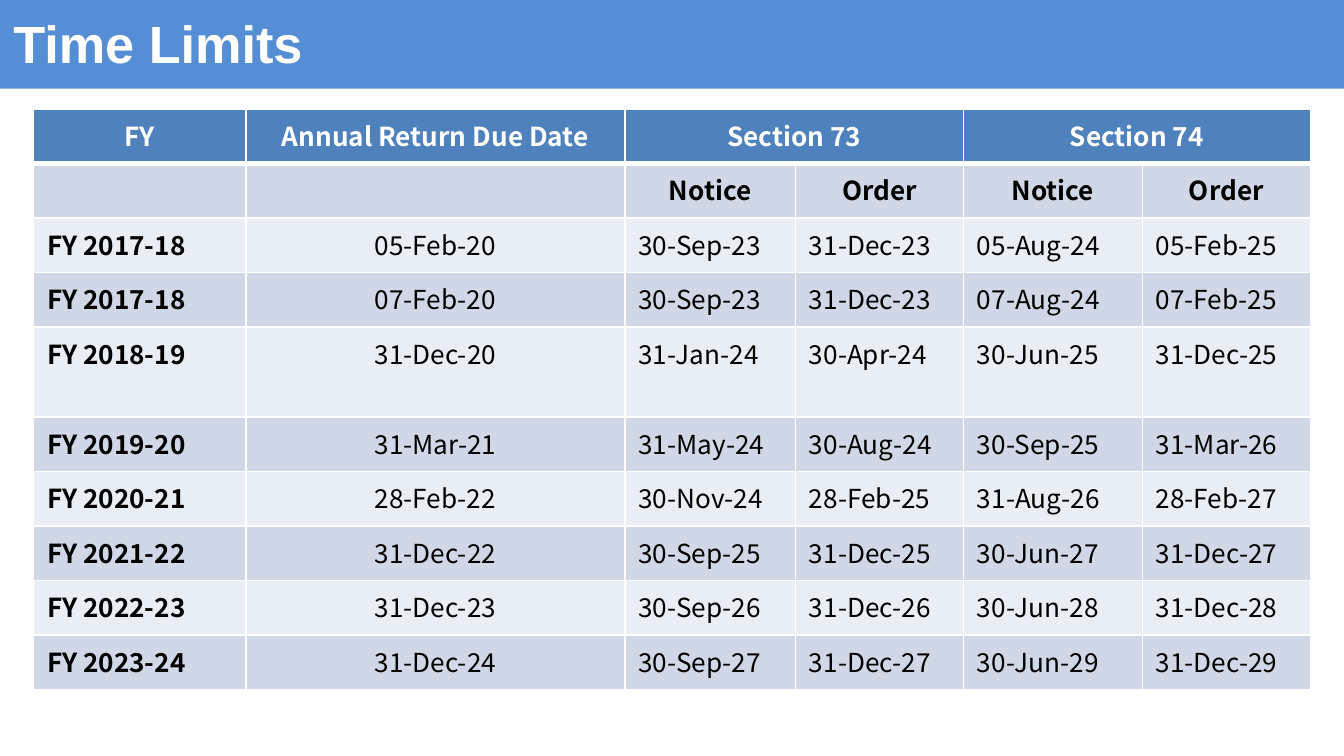
import pptx
import pptx.dml.color
import pptx.enum.text
import pptx.oxml
import pptx.oxml.ns
import pptx.util
from pptx.util import Inches

COLORS = {
    "banner": "558ED5",
    "header": "4F81BD",
    "band_dark": "D0D8E8",
    "band_light": "E9EDF4",
    "white": "FFFFFF",
    "black": "000000",
}
LEFT = pptx.enum.text.PP_ALIGN.LEFT
CENTER = pptx.enum.text.PP_ALIGN.CENTER

COLUMN_WIDTHS = [1.58, 2.82, 1.27, 1.25, 1.33, 1.25]
REGULAR_ROWS_HEIGHT = 3.65  # shared equally by all rows but the tall one
TALL_ROW, TALL_HEIGHT = 4, 0.67

TIME_LIMITS = [
    ["FY", "Annual Return Due Date", "Section 73", "", "Section 74", ""],
    ["", "", "Notice", "Order", "Notice", "Order"],
    ["FY 2017-18", "05-Feb-20", "30-Sep-23", "31-Dec-23", "05-Aug-24", "05-Feb-25"],
    ["FY 2017-18", "07-Feb-20", "30-Sep-23", "31-Dec-23", "07-Aug-24", "07-Feb-25"],
    ["FY 2018-19", "31-Dec-20", "31-Jan-24", "30-Apr-24", "30-Jun-25", "31-Dec-25"],
    ["FY 2019-20", "31-Mar-21", "31-May-24", "30-Aug-24", "30-Sep-25", "31-Mar-26"],
    ["FY 2020-21", "28-Feb-22", "30-Nov-24", "28-Feb-25", "31-Aug-26", "28-Feb-27"],
    ["FY 2021-22", "31-Dec-22", "30-Sep-25", "31-Dec-25", "30-Jun-27", "31-Dec-27"],
    ["FY 2022-23", "31-Dec-23", "30-Sep-26", "31-Dec-26", "30-Jun-28", "31-Dec-28"],
    ["FY 2023-24", "31-Dec-24", "30-Sep-27", "31-Dec-27", "30-Jun-29", "31-Dec-29"],
]


def rgb(color):
    return pptx.dml.color.RGBColor.from_string(COLORS[color])


def write_text(frame, text, font="Noto Sans CJK KR", size=14, color="black",
               bold=False, align=LEFT):
    paragraph = frame.paragraphs[0]
    paragraph.alignment = align
    run = paragraph.add_run()
    run.text = text
    run.font.name = font
    run.font.size = pptx.util.Pt(size)
    run.font.bold = bold
    run.font.color.rgb = rgb(color)


def set_borders(cell, **widths):
    """Draw white cell borders; widths in points by side: L, R, T, B."""
    properties = cell._tc.get_or_add_tcPr()
    for position, side in enumerate("LRTB"):
        width = pptx.util.Pt(widths.get(side, 1))
        properties.insert(position, pptx.oxml.parse_xml(
            f'<a:ln{side} {pptx.oxml.ns.nsdecls("a")} w="{width}"><a:solidFill>'
            f'<a:srgbClr val="{COLORS["white"]}"/></a:solidFill></a:ln{side}>'))


class SlideBuilder:
    def __init__(self, presentation):
        self.slide = presentation.slides.add_slide(presentation.slide_layouts[5])

    def banner(self, text):
        title = self.slide.shapes.title
        title.left, title.top = Inches(0), Inches(-0.02)
        title.width, title.height = Inches(10), Inches(0.68)
        title.fill.solid()
        title.fill.fore_color.rgb = rgb("banner")
        frame = title.text_frame
        frame.word_wrap = True
        frame.auto_size = pptx.enum.text.MSO_AUTO_SIZE.NONE
        frame.vertical_anchor = pptx.enum.text.MSO_ANCHOR.MIDDLE
        write_text(frame, text, font="Arial", size=28, color="white", bold=True)

    def limits_table(self, rows, left, top):
        row_height = REGULAR_ROWS_HEIGHT / (len(rows) - 1)
        table = self.slide.shapes.add_table(
            len(rows), len(COLUMN_WIDTHS), Inches(left), Inches(top),
            Inches(sum(COLUMN_WIDTHS)), Inches(REGULAR_ROWS_HEIGHT + TALL_HEIGHT)).table
        for column, width in zip(table.columns, COLUMN_WIDTHS):
            column.width = Inches(width)
        for r, values in enumerate(rows):
            table.rows[r].height = Inches(TALL_HEIGHT if r == TALL_ROW else row_height)
            for c, value in enumerate(values):
                self.limit_cell(table.cell(r, c), value, r, c)
        # Each section heading spans its notice and order columns
        for c in (2, 4):
            table.cell(0, c).merge(table.cell(0, c + 1))

    def limit_cell(self, cell, value, r, c):
        band = "header" if r == 0 else "band_dark" if r % 2 else "band_light"
        cell.fill.solid()
        cell.fill.fore_color.rgb = rgb(band)
        set_borders(cell, T=3 if r == 1 else 1, B=3 if r == 0 else 1)
        write_text(cell.text_frame, value,
                   color="white" if r == 0 else "black",
                   bold=r < 2 or c == 0,
                   align=CENTER if r < 2 or c == 1 else LEFT)


def main():
    presentation = pptx.Presentation()
    # Widescreen page, 16:9
    presentation.slide_width = Inches(10)
    presentation.slide_height = Inches(10 * 9 / 16)
    builder = SlideBuilder(presentation)
    # Title band
    builder.banner("Time Limits")
    # Due dates by financial year
    builder.limits_table(TIME_LIMITS, left=0.25, top=0.81)
    presentation.save("out.pptx")


if __name__ == "__main__":
    main()
